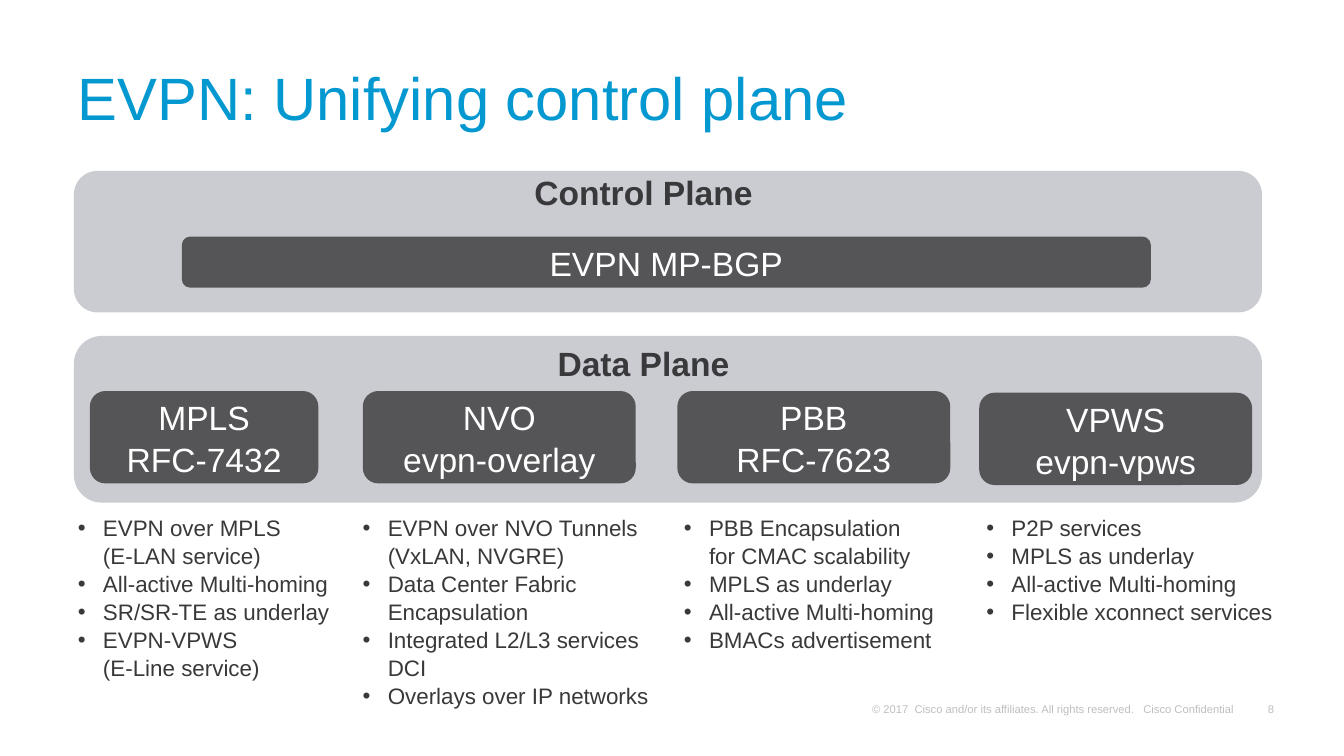
from lxml.etree import SubElement
from pptx import Presentation
from pptx.dml.color import RGBColor
from pptx.enum.shapes import MSO_SHAPE
from pptx.enum.text import MSO_ANCHOR, PP_ALIGN
from pptx.oxml.ns import qn
from pptx.util import Pt

BLUE = RGBColor(0x04, 0x98, 0xD1)
PANEL = RGBColor(0xCA, 0xCC, 0xD2)
CARD = RGBColor(0x55, 0x55, 0x58)
INK = RGBColor(0x39, 0x39, 0x3B)
WHITE = RGBColor(0xFF, 0xFF, 0xFF)
FOOTER = RGBColor(0xBF, 0xBF, 0xBF)

FONT = "Arial"
BULLET_INDENT = 13.5

# Card box, card lines, bullet box, bullets; "\n" starts an unbulleted line
SERVICES = [
    ((48.2, 209.5, 122.4, 49.5), ["MPLS", "RFC-7432"],
     (34.6, 271.4, 152, 94.3),
     ["EVPN over MPLS\n(E-LAN service)", "All-active Multi-homing",
      "SR/SR-TE as underlay", "EVPN-VPWS\n(E-Line service)"]),
    ((194.4, 209.5, 146.2, 49.5), ["NVO", "evpn-overlay"],
     (187.2, 271.4, 172.8, 108.7),
     ["EVPN over NVO Tunnels\n(VxLAN, NVGRE)",
      "Data Center Fabric Encapsulation", "Integrated L2/L3 services DCI",
      "Overlays over IP networks"]),
    ((362.9, 209.5, 146.2, 49.5), ["PBB", "RFC-7623"],
     (359.3, 271.4, 152, 80),
     ["PBB Encapsulation\nfor CMAC scalability", "MPLS as underlay",
      "All-active Multi-homing", "BMACs advertisement"]),
    ((524.6, 210.4, 146.2, 49.5), ["VPWS", "evpn-vpws"],
     (521.3, 271.4, 172, 65.5),
     ["P2P services", "MPLS as underlay", "All-active Multi-homing",
      "Flexible xconnect services"]),
]


def add_run(p, text, size, color, bold=False):
    r = p.add_run()
    r.text = text
    r.font.name = FONT
    r.font.size = Pt(size)
    r.font.bold = bold
    r.font.color.rgb = color


def add_text(s, box, text, size, color, bold=False, wrap=True,
             anchor=MSO_ANCHOR.TOP, align=PP_ALIGN.LEFT, inset=(7.2, 3.6)):
    """Add a one-paragraph text box and return its paragraph."""
    tf = s.shapes.add_textbox(*map(Pt, box)).text_frame
    tf.word_wrap = wrap
    tf.vertical_anchor = anchor
    tf.margin_left = tf.margin_right = Pt(inset[0])
    tf.margin_top = tf.margin_bottom = Pt(inset[1])
    p = tf.paragraphs[0]
    p.alignment = align
    add_run(p, text, size, color, bold)
    return p


def add_block(s, kind, box, fill):
    sp = s.shapes.add_shape(kind, *map(Pt, box))
    sp.shadow.inherit = False
    sp.fill.solid()
    sp.fill.fore_color.rgb = fill
    sp.line.fill.background()
    return sp


def add_panel(s, box, label, label_box):
    add_block(s, MSO_SHAPE.FLOWCHART_ALTERNATE_PROCESS, box, PANEL)
    add_text(s, label_box, label, 18, INK, bold=True, wrap=False)


def add_card(s, box, lines):
    tf = add_block(s, MSO_SHAPE.ROUNDED_RECTANGLE, box, CARD).text_frame
    tf.word_wrap = True
    tf.vertical_anchor = MSO_ANCHOR.MIDDLE
    for i, line in enumerate(lines):
        p = tf.add_paragraph() if i else tf.paragraphs[0]
        p.alignment = PP_ALIGN.CENTER
        p.line_spacing = 1.04
        add_run(p, line, 18, WHITE)


def indent(p, bulleted):
    """Indent a list line, hanging a bullet in front of it if asked."""
    pPr = p._p.get_or_add_pPr()
    pPr.set("marL", str(Pt(BULLET_INDENT)))
    pPr.set("indent", str(-Pt(BULLET_INDENT) if bulleted else 0))
    if bulleted:
        SubElement(pPr, qn("a:buFont"), typeface=FONT)
        SubElement(pPr, qn("a:buChar"), char="•")
    else:
        SubElement(pPr, qn("a:buNone"))


def add_bullets(s, box, items):
    tf = s.shapes.add_textbox(*map(Pt, box)).text_frame
    tf.word_wrap = True
    lines = [(text, k == 0) for item in items
             for k, text in enumerate(item.split("\n"))]
    for i, (text, bulleted) in enumerate(lines):
        p = tf.add_paragraph() if i else tf.paragraphs[0]
        indent(p, bulleted)
        p.line_spacing = 1.04
        add_run(p, text, 12, INK)


def add_footer(s, top, height):
    style = dict(size=6, color=FOOTER, anchor=MSO_ANCHOR.BOTTOM,
                 inset=(5, 2.2))
    add_text(s, (462.2, top, 209.5, height),
             "© 2017  Cisco and/or its affiliates. All rights reserved."
             "   Cisco Confidential", **style)
    add_text(s, (670.3, top, 17.3, height), "8", wrap=False,
             align=PP_ALIGN.RIGHT, **style)


def main():
    prs = Presentation()
    prs.slide_width, prs.slide_height = Pt(720), Pt(405)
    s = prs.slides.add_slide(prs.slide_layouts[6])

    title = add_text(s, (34.6, 26.6, 657.4, 57.6),
                     "EVPN: Unifying control plane", 32, BLUE,
                     anchor=MSO_ANCHOR.MIDDLE)
    title.line_spacing = 0.8

    add_panel(s, (39.6, 91.6, 636.5, 75.8), "Control Plane",
              (279.2, 88.8, 132.5, 29))
    add_card(s, (97.4, 126.7, 519.2, 27.4), ["EVPN MP-BGP"])
    add_panel(s, (39.6, 180, 636.5, 89.3), "Data Plane",
              (291.6, 180.3, 107.3, 29))
    for card_box, lines, list_box, items in SERVICES:
        add_card(s, card_box, lines)
        add_bullets(s, list_box, items)
    add_footer(s, 373.7, 12.2)

    prs.save("out.pptx")


if __name__ == "__main__":
    main()
